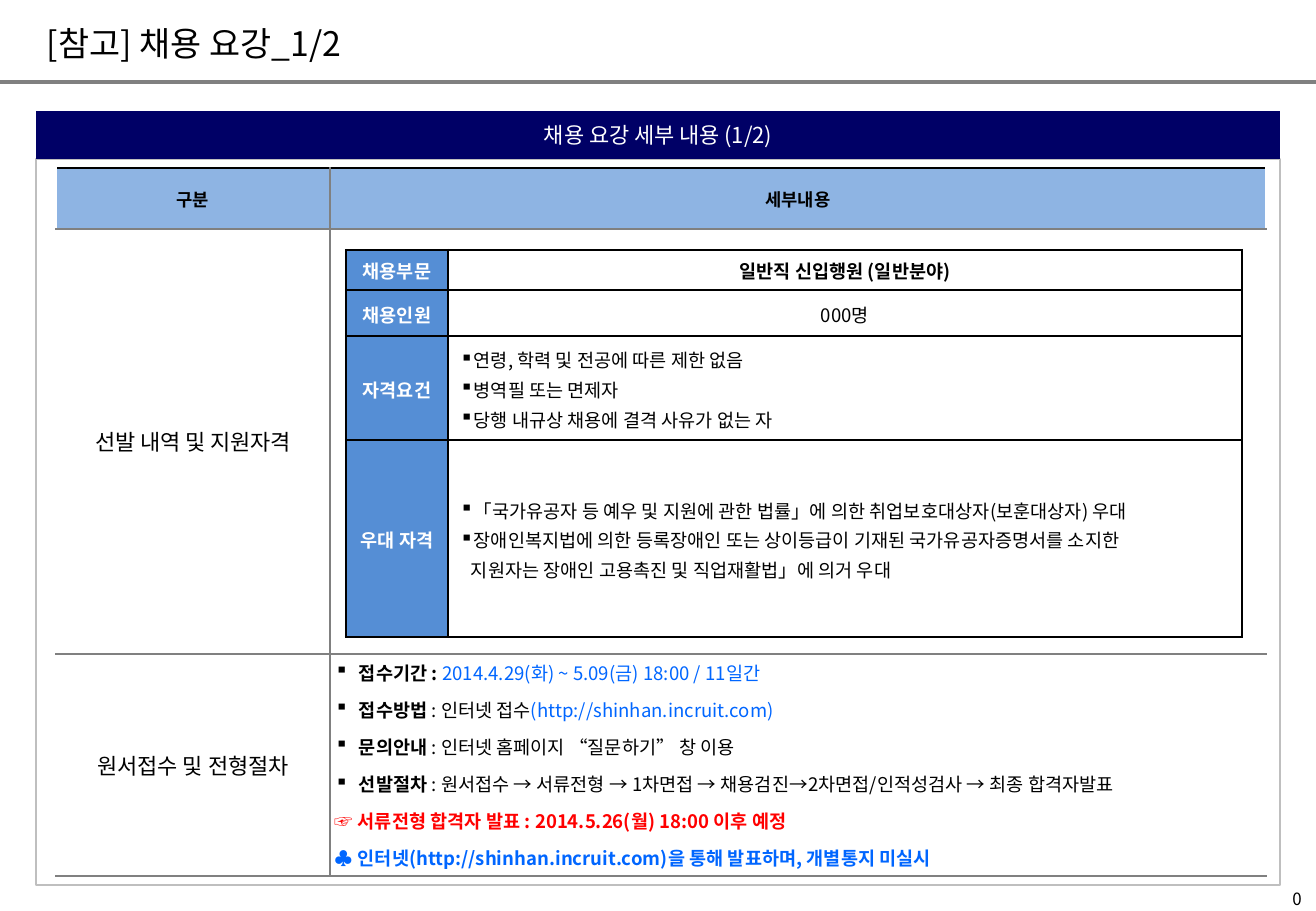
"""Build the slide with the recruitment guide, part one of two."""
from lxml.etree import SubElement
from pptx import Presentation
from pptx.dml.color import RGBColor
from pptx.enum.shapes import MSO_CONNECTOR, MSO_SHAPE
from pptx.enum.text import MSO_ANCHOR, PP_ALIGN
from pptx.oxml.ns import qn
from pptx.util import Pt

PX = 7526
FONT = "Noto Sans CJK KR"
BLACK, WHITE, GRAY = "000000", "FFFFFF", "808080"
BLUE, RED, SKY, MID, NAVY = "0066FF", "FF0000", "8EB4E3", "558ED5", "000066"
LEFT, CENTER = PP_ALIGN.LEFT, PP_ALIGN.CENTER
hue = RGBColor.from_string


def write(para, parts, size, align=LEFT, hang=0, mark=None):
    """Fill a paragraph with (text, colour, bold) parts."""
    para.alignment = align
    props = para._p.get_or_add_pPr()
    if hang:
        props.set("marL", str(hang * PX))
    if mark:
        props.set("indent", str(-hang * PX))
        SubElement(props, qn("a:buChar")).set("char", mark)
    for text, color, bold in parts:
        run = para.add_run()
        run.text = text
        run.font.size = Pt(size)
        run.font.bold = bold
        run.font.color.rgb = hue(color)
        run.font.name = FONT
        SubElement(run._r.rPr, qn("a:ea")).set("typeface", FONT)


def dress(cell, edges, fill, pad):
    """Set the borders, fill and margins of a cell."""
    props = cell._tc.get_or_add_tcPr()
    for side, (color, width) in zip("LRTB", edges):
        line = SubElement(props, qn("a:ln" + side), w=str(Pt(width)))
        paint = SubElement(line, qn("a:solidFill"))
        SubElement(paint, qn("a:srgbClr")).set("val", color)
    if fill:
        cell.fill.solid()
        cell.fill.fore_color.rgb = hue(fill)
    else:
        cell.fill.background()
    cell.vertical_anchor = MSO_ANCHOR.MIDDLE
    cell.margin_left = cell.margin_right = pad[0] * PX
    cell.margin_top = cell.margin_bottom = pad[1] * PX


deck = Presentation()
deck.slide_width, deck.slide_height = 1316 * PX, 911 * PX
slide = deck.slides.add_slide(deck.slide_layouts[6])
shapes = slide.shapes

rule = shapes.add_connector(MSO_CONNECTOR.STRAIGHT, 0, 82 * PX, 1316 * PX, 82 * PX)
rule.line.color.rgb = hue(GRAY)
rule.line.width = Pt(2.25)
SubElement(rule._element.spPr, qn("a:effectLst"))

panels = []
for top, high, fill in [(159, 726, WHITE), (111, 48, NAVY)]:
    panel = shapes.add_shape(MSO_SHAPE.RECTANGLE, 36 * PX, top * PX, 1244 * PX, high * PX)
    panel.shadow.inherit = False
    panel.fill.solid()
    panel.fill.fore_color.rgb = hue(fill)
    panels.append(panel)
frame, band = panels
frame.line.color.rgb = hue("BFBFBF")
frame.line.width = Pt(0.75)
band.line.fill.background()
band.text_frame.vertical_anchor = MSO_ANCHOR.MIDDLE
write(band.text_frame.paragraphs[0], [("채용 요강 세부 내용 (1/2)", WHITE, False)], 13, CENTER)

for box, text, size, align in [
    ((35, 7, 1281, 73), "[참고] 채용 요강_1/2", 20, LEFT),
    ((1266, 890, 62, 18), "0", 10, CENTER),
]:
    label = shapes.add_textbox(*[n * PX for n in box]).text_frame
    label.word_wrap = True
    label.vertical_anchor = MSO_ANCHOR.MIDDLE
    write(label.paragraphs[0], [(text, BLACK, False)], size, align)

grids = []
for left, top, cols, rows in [
    (56, 168, [274, 936], [61, 425, 222]),
    (346, 250, [102, 794], [40, 46, 104, 197]),
]:
    table = shapes.add_table(
        len(rows), len(cols), left * PX, top * PX, sum(cols) * PX, sum(rows) * PX
    ).table
    table.first_row = table.horz_banding = False
    for col, wide in zip(table.columns, cols):
        col.width = wide * PX
    for row, high in zip(table.rows, rows):
        row.height = high * PX
    grids.append(table)
guide, terms = grids

for r in range(3):
    for c in range(2):
        inner, outer = (GRAY, 1), (WHITE, 1)
        edges = [
            inner if c else outer,
            outer if c else inner,
            inner if r else (BLACK, 1),
            inner,
        ]
        pad = (5, 5) if (r, c) == (2, 1) else (0, 0)
        dress(guide.cell(r, c), edges, None if r else SKY, pad)

for r, c, text, size in [
    (0, 0, "구분", 10.5),
    (0, 1, "세부내용", 10.5),
    (1, 0, "선발 내역 및 지원자격", 13),
    (2, 0, "원서접수 및 전형절차", 13),
]:
    para = guide.cell(r, c).text_frame.paragraphs[0]
    write(para, [(text, BLACK, r == 0)], size, CENTER)

steps = [
    ("▪", [("접수기간 : ", BLACK, True),
           ("2014.4.29(화) ~ 5.09(금) 18:00 / 11일간", BLUE, False)]),
    ("▪", [("접수방법", BLACK, True), (" : 인터넷 접수", BLACK, False),
           ("(http://shinhan.incruit.com)", BLUE, False)]),
    ("▪", [("문의안내", BLACK, True),
           (" : 인터넷 홈페이지 “질문하기” 창 이용", BLACK, False)]),
    ("▪", [("선발절차", BLACK, True),
           (" : 원서접수 → 서류전형 → 1차면접 → 채용검진→2차면접/인적성검사 → 최종 합격자발표",
            BLACK, False)]),
    (None, [("☞ 서류전형 합격자 발표 : 2014.5.26(월) 18:00 이후 예정", RED, True)]),
    (None, [("♣ 인터넷(http://shinhan.incruit.com)을 통해 발표하며, 개별통지 미실시", BLUE, True)]),
]
body = guide.cell(2, 1).text_frame
for i, (mark, parts) in enumerate(steps):
    para = body.add_paragraph() if i else body.paragraphs[0]
    write(para, parts, 11, hang=24 if mark else 0, mark=mark)
    if i:
        para.space_before = Pt(6)

facts = [
    ("채용부문", [(None, "일반직 신입행원 (일반분야)")]),
    ("채용인원", [(None, "000명")]),
    ("자격요건", [
        ("▪", "연령, 학력 및 전공에 따른 제한 없음"),
        ("▪", "병역필 또는 면제자"),
        ("▪", "당행 내규상 채용에 결격 사유가 없는 자"),
    ]),
    ("우대 자격", [
        ("▪", "「국가유공자 등 예우 및 지원에 관한 법률」에 의한 취업보호대상자(보훈대상자) 우대"),
        ("▪", "장애인복지법에 의한 등록장애인 또는 상이등급이 기재된 국가유공자증명서를 소지한"),
        (None, "지원자는 장애인 고용촉진 및 직업재활법」에 의거 우대"),
    ]),
]
for r, (name, lines) in enumerate(facts):
    for c, items in enumerate([[(None, name)], lines]):
        cell = terms.cell(r, c)
        thick = [c == 0, c == 1, r == 0, r == 3]
        edges = [(BLACK, 1.5 if t else 1) for t in thick]
        dress(cell, edges, None if c else MID, (12, 5))
        alone = len(items) == 1
        for i, (mark, text) in enumerate(items):
            text_frame = cell.text_frame
            para = text_frame.add_paragraph() if i else text_frame.paragraphs[0]
            part = (text, BLACK if c else WHITE, c == 0 or r == 0)
            write(para, [part], 11, CENTER if alone else LEFT, 0 if alone else 11, mark)
            if r:
                para.line_spacing = 1.1

deck.save("out.pptx")
